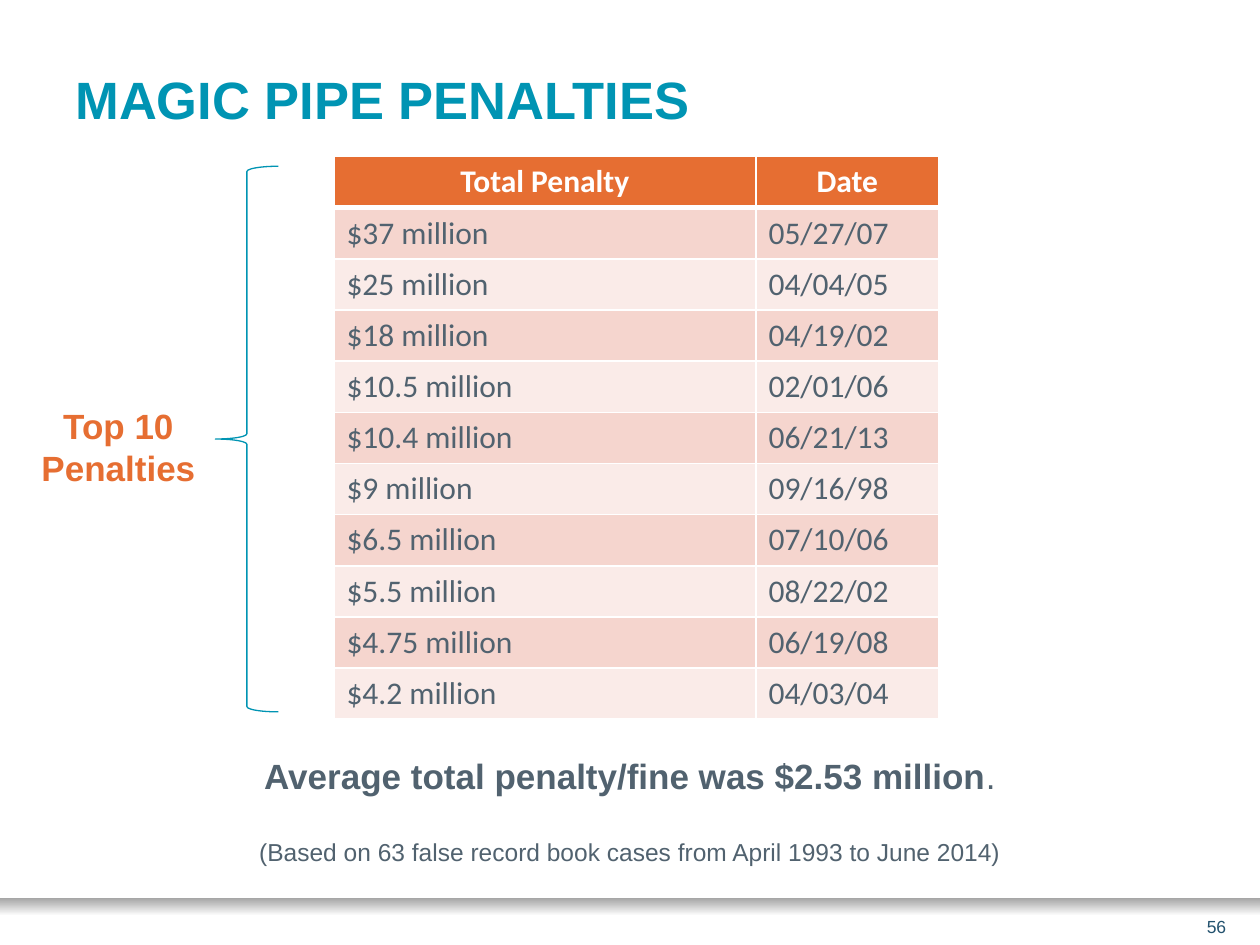
from typing import NamedTuple

from lxml.etree import SubElement
from pptx import Presentation
from pptx.dml.color import RGBColor
from pptx.enum.shapes import MSO_SHAPE as Shape
from pptx.enum.text import MSO_ANCHOR as Anchor, PP_ALIGN as Align
from pptx.oxml.ns import qn
from pptx.util import Pt

TEAL, ORANGE, GREY, NAVY, WHITE = "0094B3", "E66E32", "51626F", "23526E", "FFFFFF"
BANDS = ("F5D5CE", "FAEBE8")


class Label(NamedTuple):
    box: tuple[float, float, float, float]
    text: str
    size: float
    color: str
    bold: bool = True
    align: Align = Align.CENTER
    anchor: Anchor = Anchor.TOP


class Penalty(NamedTuple):
    total: str
    date: str


LABELS = [
    Label((36, 30.24, 648, 51.84), "MAGIC PIPE PENALTIES", 30, TEAL,
          align=Align.LEFT, anchor=Anchor.MIDDLE),
    Label((540, 522, 167.76, 15.12), "56", 10, NAVY, False, Align.RIGHT, Anchor.MIDDLE),
    Label((12.24, 227.5, 110.88, 55.44), "Top 10\nPenalties", 20, ORANGE),
]
PENALTIES = [
    Penalty("$37 million", "05/27/07"),
    Penalty("$25 million", "04/04/05"),
    Penalty("$18 million", "04/19/02"),
    Penalty("$10.5 million", "02/01/06"),
    Penalty("$10.4 million", "06/21/13"),
    Penalty("$9 million", "09/16/98"),
    Penalty("$6.5 million", "07/10/06"),
    Penalty("$5.5 million", "08/22/02"),
    Penalty("$4.75 million", "06/19/08"),
    Penalty("$4.2 million", "04/03/04"),
]


def rgb(color: str) -> RGBColor:
    return RGBColor.from_string(color)


def style(font, size: float, color: str, bold: bool, name: str = "Arial") -> None:
    font.name, font.size, font.bold = name, Pt(size), bold
    font.color.rgb = rgb(color)


def add_label(s, label: Label):
    tf = s.shapes.add_textbox(*map(Pt, label.box)).text_frame
    tf.word_wrap = True
    tf.vertical_anchor = label.anchor
    tf.text = label.text
    for p in tf.paragraphs:
        p.alignment = label.align
        for r in p.runs:
            style(r.font, label.size, label.color, label.bold)
    return tf


def add_borders(cell, bottom: float) -> None:
    tc_pr = cell._tc.get_or_add_tcPr()
    for tag, width in (("a:lnL", 1), ("a:lnR", 1), ("a:lnT", 1), ("a:lnB", bottom)):
        ln = SubElement(tc_pr, qn(tag), w=str(Pt(width)))
        SubElement(SubElement(ln, qn("a:solidFill")), qn("a:srgbClr"), val=WHITE)


def add_penalty_table(s, rows: list[Penalty]) -> None:
    row_height, widths = 29.25, (241.2, 104.4)
    table = s.shapes.add_table(len(rows) + 1, len(widths), Pt(190.8), Pt(89.5),
                               Pt(sum(widths)), Pt(row_height * (len(rows) + 1))).table
    for col, width in zip(table.columns, widths):
        col.width = Pt(width)
    for i, row in enumerate([Penalty("Total Penalty", "Date"), *rows]):
        header = i == 0
        table.rows[i].height = Pt(row_height)
        for j, text in enumerate(row):
            cell = table.cell(i, j)
            add_borders(cell, 3 if header else 1)
            cell.fill.solid()
            cell.fill.fore_color.rgb = rgb(ORANGE if header else BANDS[(i - 1) % 2])
            p = cell.text_frame.paragraphs[0]
            p.text = text
            p.alignment = Align.CENTER if header else Align.LEFT
            style(p.runs[0].font, 18, WHITE if header else GREY, header, "Calibri")


def main() -> None:
    prs = Presentation()
    prs.slide_width, prs.slide_height = Pt(720), Pt(540)
    s = prs.slides.add_slide(prs.slide_layouts[6])

    # Footer band fading to white
    sp = s.shapes.add_shape(Shape.RECTANGLE, 0, Pt(513.36), Pt(720), Pt(23.76))
    sp.shadow.inherit = False
    sp.line.fill.background()
    sp.fill.gradient()
    sp.fill.gradient_angle = 270
    for stop, color, position in zip(sp.fill.gradient_stops, ("A6A6A6", WHITE), (0, 0.42)):
        stop.color.rgb = rgb(color)
        stop.position = position

    # Title, page number and brace caption
    for label in LABELS:
        add_label(s, label)

    add_penalty_table(s, PENALTIES)

    # Average and its basis
    tf = add_label(s, Label((0, 427.68, 720, 72.72),
                            "Average total penalty/fine was $2.53 million", 20, GREY))
    r = tf.paragraphs[0].add_run()
    r.text = "."
    style(r.font, 20, GREY, False)
    p = tf.add_paragraph()
    p.text = "(Based on 63 false record book cases from April 1993 to June 2014)"
    p.alignment = Align.CENTER
    p.space_before = Pt(23)
    style(p.runs[0].font, 14, GREY, False)

    # Brace spanning the table
    sp = s.shapes.add_shape(Shape.LEFT_BRACE, Pt(123.12), Pt(95.04), Pt(36), Pt(311.76))
    sp.shadow.inherit = False
    sp.fill.background()
    sp.line.color.rgb = rgb(TEAL)
    sp.line.width = Pt(0.75)

    prs.save("out.pptx")


if __name__ == "__main__":
    main()
